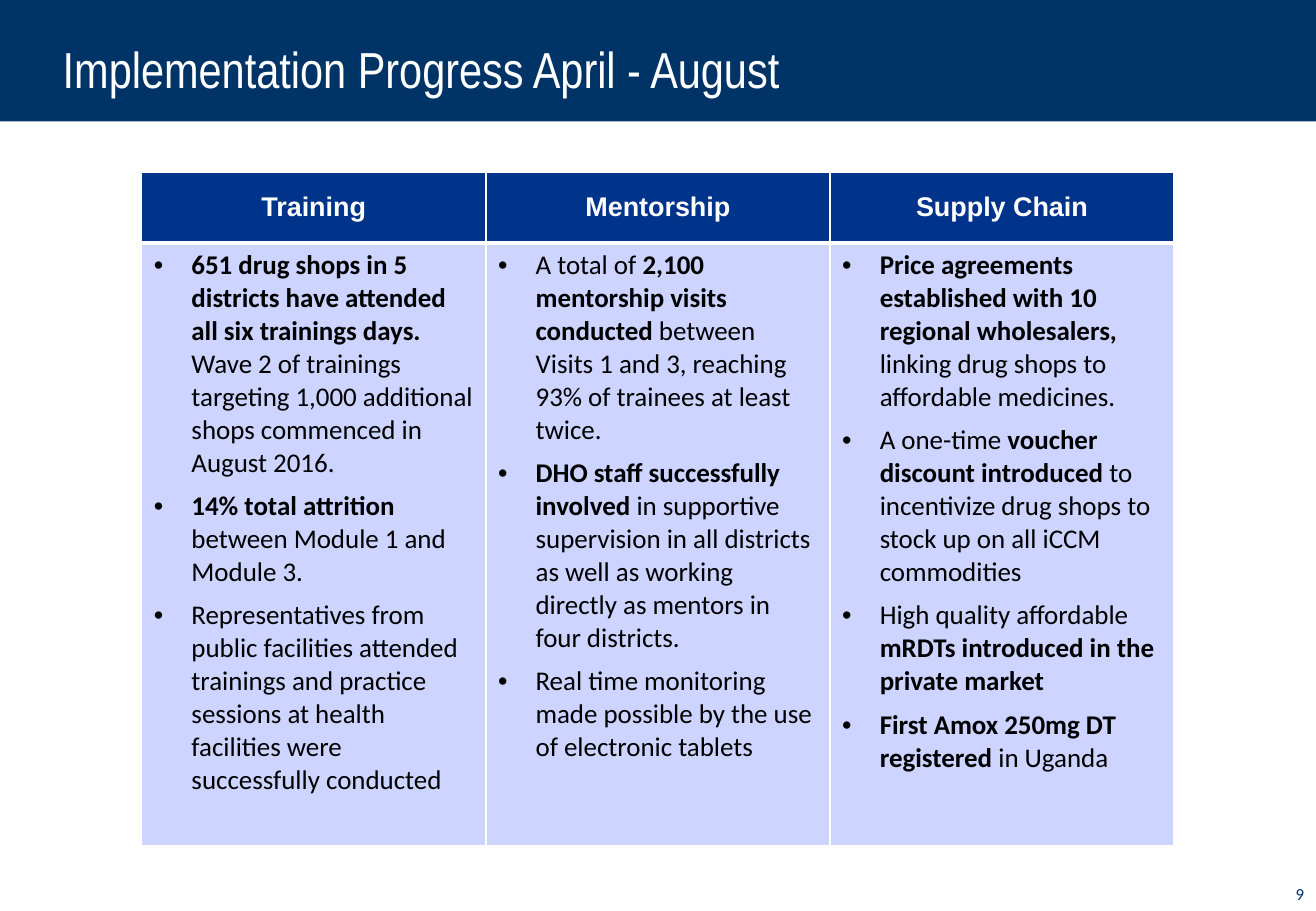
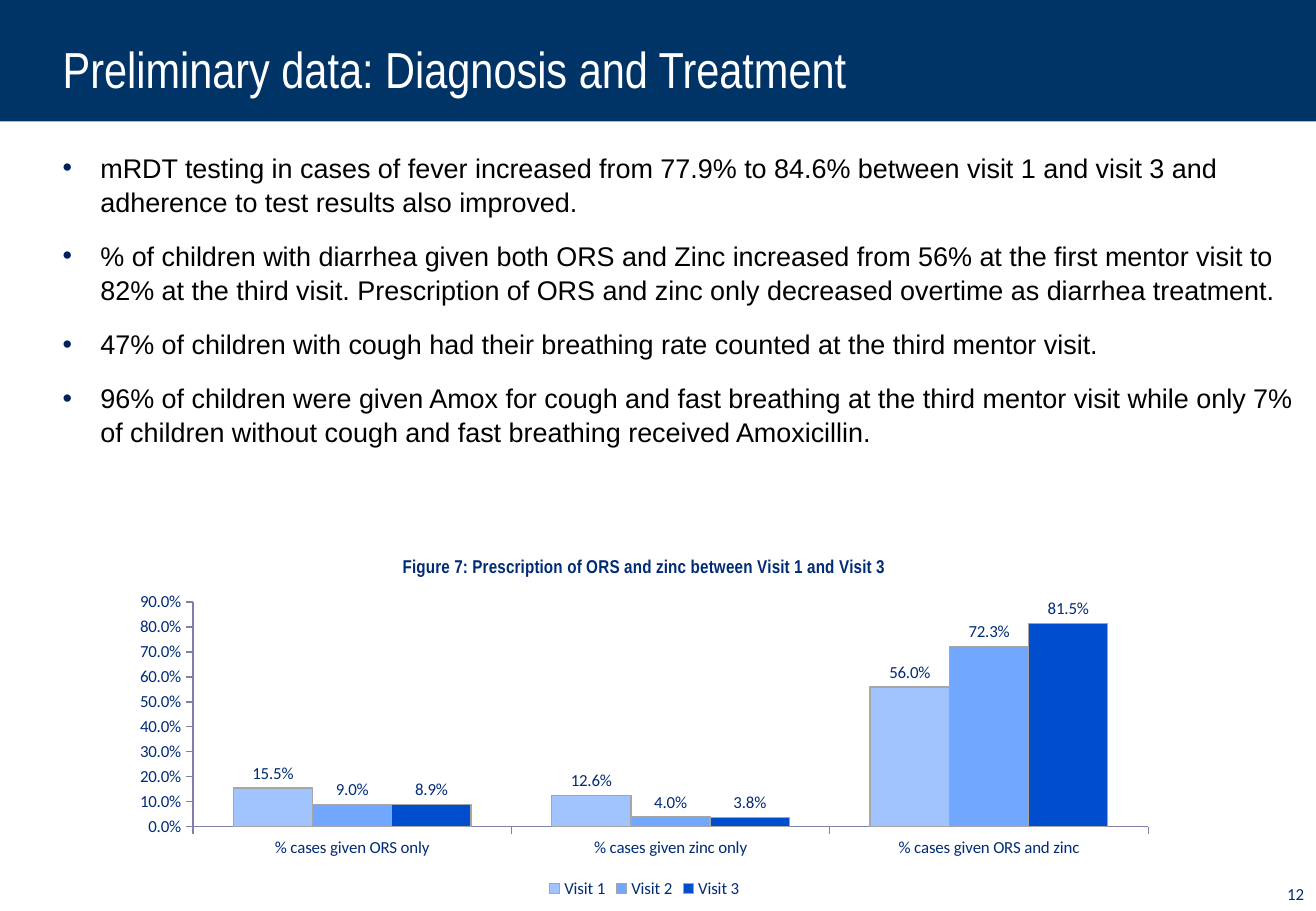
from dataclasses import dataclass

from lxml import etree
from pptx import Presentation
from pptx.chart.data import CategoryChartData
from pptx.dml.color import RGBColor
from pptx.enum.chart import XL_CHART_TYPE, XL_LABEL_POSITION, XL_LEGEND_POSITION, XL_TICK_MARK
from pptx.enum.shapes import MSO_SHAPE
from pptx.enum.text import MSO_ANCHOR, PP_ALIGN
from pptx.oxml.ns import qn
from pptx.util import Inches, Pt

LEFT, CENTER, RIGHT = PP_ALIGN.LEFT, PP_ALIGN.CENTER, PP_ALIGN.RIGHT
TOP, MIDDLE = MSO_ANCHOR.TOP, MSO_ANCHOR.MIDDLE
RECTANGLE = MSO_SHAPE.RECTANGLE
CLUSTERED = XL_CHART_TYPE.COLUMN_CLUSTERED
OUTSIDE_END = XL_LABEL_POSITION.OUTSIDE_END
LEGEND_BOTTOM = XL_LEGEND_POSITION.BOTTOM
TICK_OUTSIDE = XL_TICK_MARK.OUTSIDE
COLUMNS, ROWS, UNIT = 130, 90, Inches(1 / 12)


@dataclass(frozen=True)
class Theme:
    """Colours, fonts and type sizes that the slides share."""
    band: str = "003366"
    header: str = "00338A"
    cell: str = "CCD4FF"
    white: str = "FFFFFF"
    black: str = "000000"
    navy: str = "002C76"
    bullet: str = "002060"
    axis: str = "7F7FA8"
    bar_line: str = "A6A6A6"
    bars: tuple = ("A1C4FF", "72A7FF", "004DCE")
    title_font: str = "Arial Narrow"
    body_font: str = "Arial"
    small_font: str = "Calibri"
    title_size: int = 30
    body_size: int = 16
    caption_size: int = 11
    small_size: int = 10


@dataclass(frozen=True)
class Box:
    """An area measured in columns and rows of the slide grid."""
    left: float
    top: float
    width: float
    height: float

    def area(self, left, top, width, height):
        """Return an area placed relative to this one."""
        return Box(self.left + left, self.top + top, width, height)

    def lengths(self):
        """Return left, top, width and height as slide lengths."""
        return [round(value * UNIT) for value in (self.left, self.top, self.width, self.height)]


THEME = Theme()
SLIDE = Box(0, 0, COLUMNS, ROWS)

PROGRESS = {
    "Training": [
        "**651 drug shops in 5 districts have attended all six trainings days. **Wave 2 of trainings "
        "targeting 1,000 additional shops commenced in August 2016.",
        "**14% total attrition **between Module 1 and Module 3.",
        "Representatives from public facilities attended trainings and practice sessions at health "
        "facilities were successfully conducted",
    ],
    "Mentorship": [
        "A total of **2,100 mentorship visits conducted **between Visits 1 and 3, reaching 93% of "
        "trainees at least twice.",
        "**DHO staff successfully involved **in supportive supervision in all districts as well as "
        "working directly as mentors in four districts.",
        "Real time monitoring made possible by the use of electronic tablets",
    ],
    "Supply Chain": [
        "**Price agreements established with 10 regional wholesalers, **linking drug shops to "
        "affordable medicines.",
        "A one-time **voucher discount introduced **to incentivize drug shops to stock up on all "
        "iCCM commodities",
        "High quality affordable **mRDTs introduced in the private market**",
        "**First Amox 250mg DT registered **in Uganda",
    ],
}
FINDINGS = [
    "mRDT testing in cases of fever increased from 77.9% to 84.6% between visit 1 and visit 3 and "
    "adherence to test results also improved.",
    "% of children with diarrhea given both ORS and Zinc increased from 56% at the first mentor "
    "visit to 82% at the third visit. Prescription of ORS and zinc only decreased overtime as "
    "diarrhea treatment.",
    "47% of children with cough had their breathing rate counted at the third mentor visit.",
    "96% of children were given Amox for cough and fast breathing at the third mentor visit while "
    "only 7% of children without cough and fast breathing received Amoxicillin.",
]
CHART_TITLE = "Figure 7: Prescription of ORS and zinc between Visit 1 and Visit 3"
CASES = ["% cases given ORS only", "% cases given zinc only", "% cases given ORS and zinc"]
VISITS = {
    "Visit 1": (0.155, 0.126, 0.56),
    "Visit 2": (0.09, 0.04, 0.723),
    "Visit 3": (0.089, 0.038, 0.815),
}


def rgb(color):
    """Return a colour object for a hex string."""
    return RGBColor.from_string(color)


def set_font(font, name, size, color, bold=False):
    """Give a font its face, size, colour and weight."""
    font.name, font.size, font.bold = name, Pt(size), bold
    font.color.rgb = rgb(color)


def add_bullet(paragraph, color):
    """Give a paragraph a hanging round bullet."""
    properties = paragraph._p.get_or_add_pPr()
    properties.set("marL", str(Inches(0.31)))
    properties.set("indent", str(-Inches(0.31)))
    bullet_color = etree.SubElement(properties, qn("a:buClr"))
    etree.SubElement(bullet_color, qn("a:srgbClr"), val=color)
    etree.SubElement(properties, qn("a:buFont"), typeface="Arial")
    etree.SubElement(properties, qn("a:buChar"), char="•")


def write(frame, texts, font=THEME.body_font, size=THEME.body_size, color=THEME.black, bold=False,
          align=LEFT, bullet=None, after=0, spacing=None):
    """Write one paragraph per text; pairs of ** switch the weight."""
    for index, text in enumerate(texts):
        paragraph = frame.add_paragraph() if index else frame.paragraphs[0]
        if bullet:
            add_bullet(paragraph, bullet)
        paragraph.alignment = align
        paragraph.space_after = Pt(after)
        paragraph.line_spacing = spacing
        for position, piece in enumerate(text.split("**")):
            if piece:
                run = paragraph.add_run()
                run.text = piece
                set_font(run.font, font, size, color, bold != bool(position % 2))


def add_text(slide, box, texts, anchor=TOP, insets=(0, 0, 0, 0), **text_format):
    """Add a wrapping text box."""
    frame = slide.shapes.add_textbox(*box.lengths()).text_frame
    frame.word_wrap = True
    frame.vertical_anchor = anchor
    frame.margin_left, frame.margin_top, frame.margin_right, frame.margin_bottom = map(Inches, insets)
    write(frame, texts, **text_format)


def add_page(presentation, title, number):
    """Add a blank slide with the title band and page number."""
    slide = presentation.slides.add_slide(presentation.slide_layouts[6])
    band_box = SLIDE.area(0, 0, COLUMNS, 12)
    band = slide.shapes.add_shape(RECTANGLE, *band_box.lengths())
    band.shadow.inherit = False
    band.fill.solid()
    band.fill.fore_color.rgb = rgb(THEME.band)
    band.line.fill.background()
    add_text(slide, band_box.area(6.2, 2.3, 117.6, 10.2), [title], anchor=MIDDLE,
             insets=(0, 0, 0.1, 0.02), font=THEME.title_font, size=THEME.title_size,
             color=THEME.white, spacing=0.8)
    add_text(slide, SLIDE.area(124, 86.5, 6, 3.6), [str(number)], anchor=MIDDLE,
             insets=(0.1, 0.05, 0.1, 0.05), font=THEME.small_font, size=THEME.small_size,
             color=THEME.navy, align=RIGHT)
    return slide


def style_cell(cell, fill, top, bottom):
    """Give a cell white borders and a fill."""
    properties = cell._tc.get_or_add_tcPr()
    for side, width in (("L", 1), ("R", 1), ("T", top), ("B", bottom)):
        line = etree.SubElement(properties, qn(f"a:ln{side}"), w=str(Pt(width)))
        line_fill = etree.SubElement(line, qn("a:solidFill"))
        etree.SubElement(line_fill, qn("a:srgbClr"), val=THEME.white)
    cell.fill.solid()
    cell.fill.fore_color.rgb = rgb(fill)


def add_progress_table(slide, box, topics, header_rows=7):
    """Fill the box with one column per topic."""
    table = slide.shapes.add_table(2, len(topics), *box.lengths()).table
    table.rows[0].height = round(header_rows * UNIT)
    table.rows[1].height = round((box.height - header_rows) * UNIT)
    for column, (topic, points) in enumerate(topics.items()):
        table.columns[column].width = round(box.width / len(topics) * UNIT)
        header, body = table.cell(0, column), table.cell(1, column)
        style_cell(header, THEME.header, 1, 3)
        style_cell(body, THEME.cell, 3, 1)
        header.vertical_anchor = MIDDLE
        write(header.text_frame, [topic], color=THEME.white, bold=True, align=CENTER)
        write(body.text_frame, points, font=THEME.small_font, bullet=THEME.black, after=6)


def place_plot(chart, **shares):
    """Set the inner plot area as shares of the chart."""
    plot_area = chart._chartSpace.chart.plotArea
    for previous in plot_area.findall(qn("c:layout")):
        plot_area.remove(previous)
    layout = etree.Element(qn("c:layout"))
    manual = etree.SubElement(layout, qn("c:manualLayout"))
    settings = {"layoutTarget": "inner", "xMode": "edge", "yMode": "edge", **shares}
    for name, value in settings.items():
        etree.SubElement(manual, qn(f"c:{name}"), val=str(value))
    plot_area.insert(0, layout)


def add_visit_chart(slide, box):
    """Fill the box with the clustered columns of the three visits."""
    data = CategoryChartData(number_format="0.0%")
    data.categories = CASES
    for visit, values in VISITS.items():
        data.add_series(visit, values)
    chart = slide.shapes.add_chart(CLUSTERED, *box.lengths(), data).chart
    set_font(chart.font, THEME.small_font, THEME.small_size, THEME.navy)
    chart.has_title = True
    write(chart.chart_title.text_frame, [CHART_TITLE], font=THEME.title_font,
          size=THEME.caption_size, color=THEME.navy, bold=True, align=CENTER)
    chart.chart_title.include_in_layout = False
    chart.has_legend = True
    chart.legend.position = LEGEND_BOTTOM
    chart.legend.include_in_layout = False
    for axis in (chart.category_axis, chart.value_axis):
        axis.has_major_gridlines = False
        axis.major_tick_mark = TICK_OUTSIDE
        axis.format.line.color.rgb = rgb(THEME.axis)
    scale = chart.value_axis
    scale.minimum_scale, scale.maximum_scale, scale.major_unit = 0, 0.9, 0.1
    scale.tick_labels.number_format = "0.0%"
    scale.tick_labels.number_format_is_linked = False
    plot = chart.plots[0]
    plot.gap_width, plot.overlap, plot.vary_by_categories = 102, 0, False
    for series, color in zip(plot.series, THEME.bars):
        series.format.fill.solid()
        series.format.fill.fore_color.rgb = rgb(color)
        series.format.line.color.rgb = rgb(THEME.bar_line)
        series.format.line.width = Pt(0.75)
        labels = series.data_labels
        labels.show_value = True
        labels.position = OUTSIDE_END
        labels.number_format = "0.0%"
        labels.number_format_is_linked = False
        set_font(labels.font, THEME.small_font, THEME.small_size, THEME.navy)
    place_plot(chart, x=0.07, y=0.17, w=0.91, h=0.62)


def main():
    """Build the two slides and save them."""
    presentation = Presentation()
    presentation.slide_width, presentation.slide_height = SLIDE.lengths()[2:]
    slide = add_page(presentation, "Implementation Progress April - August", 9)
    add_progress_table(slide, SLIDE.area(14, 17, 102, 66.6), PROGRESS)
    slide = add_page(presentation, "Preliminary data: Diagnosis and Treatment", 12)
    add_text(slide, SLIDE.area(6.2, 14.8, 122, 21.6), FINDINGS, bullet=THEME.bullet, after=12,
             spacing=1.05)
    add_visit_chart(slide, SLIDE.area(11.8, 53.4, 103.7, 35.8))
    presentation.save("out.pptx")


if __name__ == "__main__":
    main()
